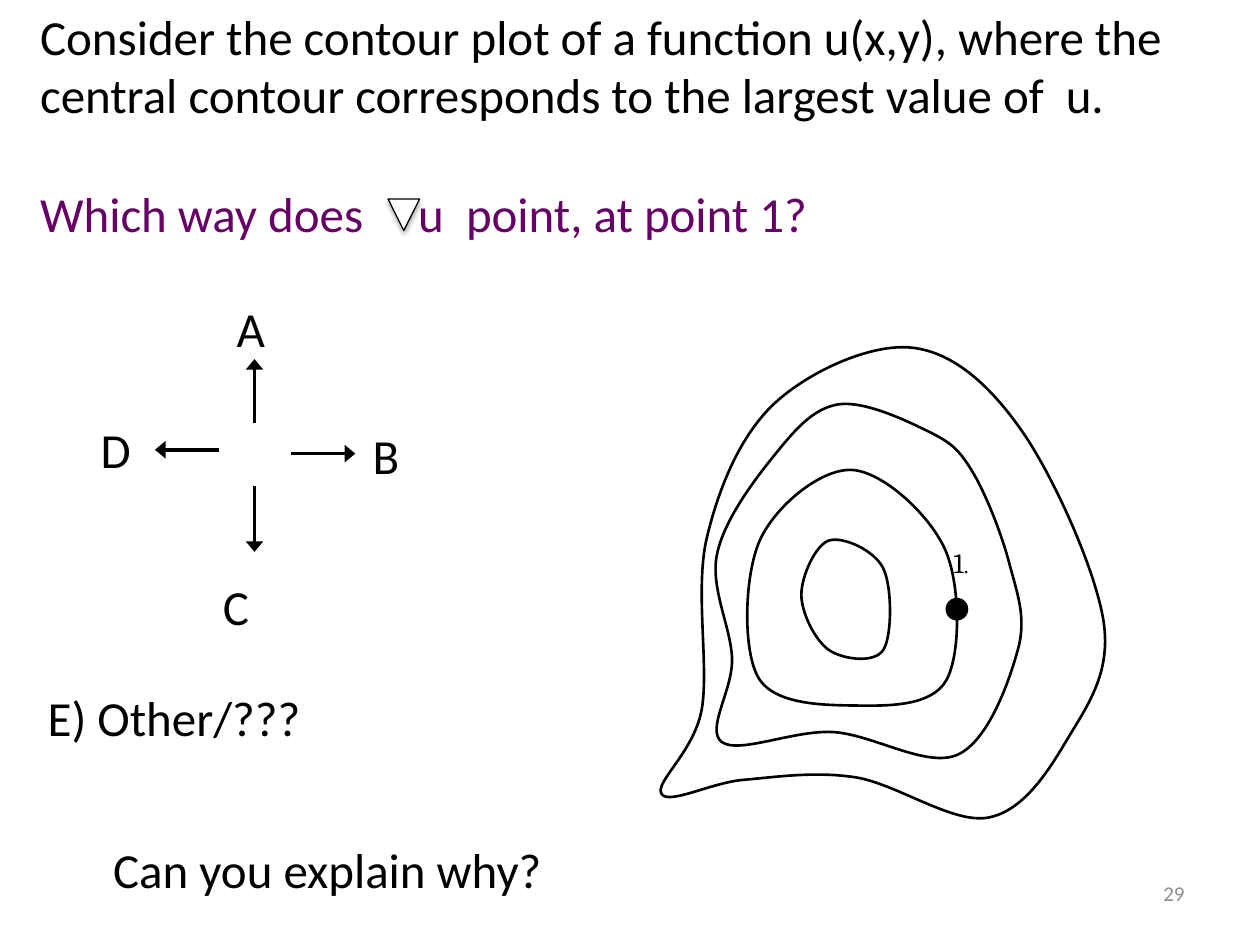
"""Build a quiz slide on the gradient direction at a point of a contour plot."""
from lxml import etree
from pptx import Presentation
from pptx.dml.color import RGBColor
from pptx.enum.shapes import MSO_CONNECTOR, MSO_SHAPE
from pptx.enum.text import MSO_ANCHOR, MSO_AUTO_SIZE, PP_ALIGN
from pptx.oxml import parse_xml
from pptx.oxml.ns import nsdecls, qn
from pptx.util import Inches, Pt

STRAIGHT = MSO_CONNECTOR.STRAIGHT
DOT, NABLA = MSO_SHAPE.OVAL, MSO_SHAPE.FLOWCHART_MERGE
MIDDLE, RIGHT = MSO_ANCHOR.MIDDLE, PP_ALIGN.RIGHT
GROW = MSO_AUTO_SIZE.SHAPE_TO_FIT_TEXT
BLACK, WHITE, PURPLE, GRAY = "000000", "FFFFFF", "660066", "8C8C8C"

prs = Presentation()
prs.slide_width, prs.slide_height = Inches(10), Inches(7.5)
CELL = prs.slide_width / 100
slide = prs.slides.add_slide(prs.slide_layouts[6])


def grid(*cells):
    return [round(cell * CELL) for cell in cells]


def write(box, text, wrap=True, size=28, color=BLACK, font="Calibri"):
    frame = slide.shapes.add_textbox(*grid(*box)).text_frame
    frame.word_wrap = wrap
    frame.text = text
    for paragraph in frame.paragraphs:
        for run in paragraph.runs:
            run.font.size, run.font.name = Pt(size), font
            run.font.color.rgb = RGBColor.from_string(color)
    return frame


number = write((71.7, 68.3, 23.3, 5.2), "29", size=12, color=GRAY)
number.vertical_anchor = MIDDLE
number.paragraphs[0].alignment = RIGHT

contours = [
    [(56.1, 42.7), (55.7, 56.3), (52.5, 63), (59, 61.9), (67.9, 61.7), (78.4, 64.9),
     (84.7, 58.7), (87.6, 49.4), (81.1, 34.2), (72.4, 27.6), (61.5, 32)],
    [(56.9, 44), (58.1, 52.3), (57.3, 58.9), (66.1, 58.1), (76, 59.9), (80.8, 51.5),
     (80.1, 44.7), (77.1, 37.3), (73.6, 34.2), (66.5, 32.1), (61.4, 36.2)],
    [(60.3, 42.9), (60.2, 53.8), (68, 56), (75.1, 54), (75.0, 43.6), (67.6, 37.3)],
    [(65.8, 42.9), (63.6, 47.2), (65.8, 51.6), (70.1, 51.6), (70.1, 45.1)],
]
for knots in contours:
    outline = slide.shapes.build_freeform(*grid(*knots[0]))
    for i, start in enumerate(knots):
        before, end, after = knots[i - 1], knots[(i + 1) % len(knots)], knots[(i + 2) % len(knots)]
        leaving = [b + (c - a) / 6 for a, b, c in zip(before, start, end)]
        arriving = [c - (d - b) / 6 for b, c, d in zip(start, end, after)]
        outline.add_line_segments([grid(*spot) for spot in (leaving, arriving, end)], close=i == len(knots) - 1)
    contour = outline.convert_to_shape()
    sides = list(contour._element.spPr.iter(qn("a:lnTo")))
    for leaving, arriving, end in zip(sides[::3], sides[1::3], sides[2::3]):
        bend = etree.Element(qn("a:cubicBezTo"))
        leaving.addprevious(bend)
        for side in (leaving, arriving, end):
            bend.append(side[0])
            side.getparent().remove(side)
    contour.shadow.inherit = False
    contour.fill.solid()
    contour.fill.fore_color.rgb = RGBColor.from_string(WHITE)
    contour.line.color.rgb = RGBColor.from_string(BLACK)
    contour.line.width = Pt(1.5)

point_label = write((74.7, 42.8, 5.6, 6.7), "1", size=16, font="Cambria")
period = point_label.paragraphs[0].add_run()
period.text = "."
period.font.size, period.font.name = Pt(12), "Times New Roman"
period.font.color.rgb = RGBColor.from_string(BLACK)

question = write((2.2, 0, 97.8, 24.6),
                 "Consider the contour plot of a function u(x,y), where the central contour "
                 "corresponds to the largest value of\tu.\nWhich way does\tu\tpoint, at point 1?")
question.auto_size = GROW
prompt = question.paragraphs[1]
prompt.space_before = Pt(34)
prompt.runs[0].font.color.rgb = RGBColor.from_string(PURPLE)
for paragraph, stops in zip(question.paragraphs, [(81.4,), (30, 33.8)]):
    tabs = etree.SubElement(paragraph._p.get_or_add_pPr(), qn("a:tabLst"))
    for stop in stops:
        etree.SubElement(tabs, qn("a:tab"), pos=str(grid(stop)[0]), algn="l")

for arrow_ends in [(17.4, 35.7, 12.3, 35.7), (20.2, 33.6, 20.2, 28.5),
                   (20.2, 38.6, 20.2, 43.8), (23.1, 36, 28.2, 36)]:
    arrow = slide.shapes.add_connector(STRAIGHT, *grid(*arrow_ends))
    arrow.line.color.rgb = RGBColor.from_string(BLACK)
    arrow.line.width = Pt(2)
    etree.SubElement(arrow.line._get_or_add_ln(), qn("a:tailEnd"), type="triangle", w="lg", len="med")
    etree.SubElement(arrow._element.spPr, qn("a:effectLst"))

for left, top, width, wrap, answer in [
    (7, 32.8, 4.9, False, "D"), (17.8, 23.2, 4.7, False, "A"),
    (28.6, 33.3, 4.7, False, "B"), (16.7, 45.3, 10.6, True, "C"),
    (2.8, 54.1, 24.5, False, "E) Other/???"), (8, 66.1, 50.4, True, "Can you explain why?"),
]:
    write((left, top, width, 5.7), answer, wrap).auto_size = GROW

for preset, box, color in [(DOT, (75.1, 47.5, 1.7, 1.7), BLACK),
                           (NABLA, (30.8, 15.8, 2.5, 2.5), WHITE)]:
    mark = slide.shapes.add_shape(preset, *grid(*box))
    mark.shadow.inherit = False
    mark.fill.solid()
    mark.fill.fore_color.rgb = RGBColor.from_string(color)
    mark.line.color.rgb = RGBColor.from_string(BLACK)
    mark.line.width = Pt(0.75)
    if preset == NABLA:
        mark._element.spPr.find(qn("a:effectLst")).append(parse_xml(
            f'<a:outerShdw {nsdecls("a")} blurRad="{Pt(3.1)}" dist="{Pt(1.8)}" dir="5400000" '
            f'rotWithShape="0"><a:srgbClr val="{BLACK}"><a:alpha val="35000"/></a:srgbClr>'
            '</a:outerShdw>'))

prs.save("out.pptx")
